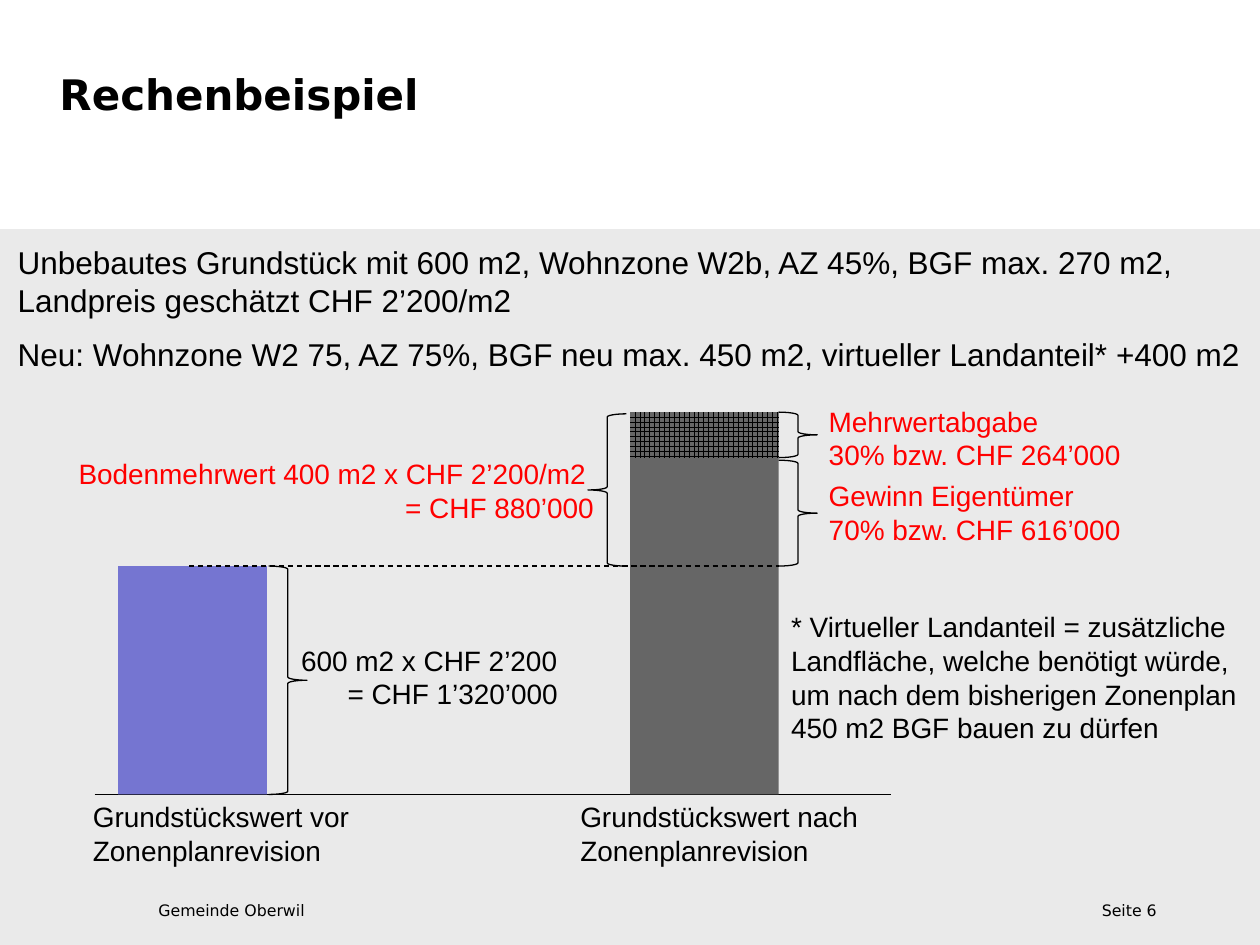
from lxml import etree
from pptx import Presentation
from pptx.dml.color import RGBColor
from pptx.enum import dml, shapes, text
from pptx.oxml.ns import qn
from pptx.util import Pt

COLORS = {"black": "000000", "red": "FF0000", "panel": "EAEAEA",
          "before": "7575D1", "after": "666666"}
COLORS = {name: RGBColor.from_string(c) for name, c in COLORS.items()}
LEFT, RIGHT = text.PP_ALIGN.LEFT, text.PP_ALIGN.RIGHT
RECT = shapes.MSO_SHAPE.RECTANGLE
LEFT_BRACE, RIGHT_BRACE = shapes.MSO_SHAPE.LEFT_BRACE, shapes.MSO_SHAPE.RIGHT_BRACE

prs = Presentation()
prs.slide_width, prs.slide_height = Pt(720), Pt(540)
s = prs.slides.add_slide(prs.slide_layouts[5])


def add_shape(kind, box, fill=None):
    """Add a filled shape without outline, or a thin outline without fill."""
    sp = s.shapes.add_shape(kind, *map(Pt, box))
    sp.shadow.inherit = False
    if fill:
        sp.fill.solid()
        sp.fill.fore_color.rgb = COLORS[fill]
        sp.line.fill.background()
    else:
        sp.fill.background()
        sp.line.color.rgb = COLORS["black"]
        sp.line.width = Pt(0.75)
    return sp


def write(sp, lines, size, color="black", font="Arial", bold=False, align=LEFT, margins=None):
    """Fill a text frame with one paragraph per line."""
    tf = sp.text_frame
    tf.vertical_anchor = text.MSO_ANCHOR.TOP
    if margins is not None:
        tf.margin_left = tf.margin_right = tf.margin_top = tf.margin_bottom = Pt(margins)
    for i, line in enumerate(lines):
        p = tf.paragraphs[0] if i == 0 else tf.add_paragraph()
        p.alignment = align
        r = p.add_run()
        r.text = line
        for name, value in {"name": font, "size": Pt(size), "bold": bold}.items():
            setattr(r.font, name, value)
        r.font.color.rgb = COLORS[color]
    return tf


# Panel, title and footer
panel = add_shape(RECT, (0, 131, 720, 409), "panel")
s.shapes._spTree.insert(2, panel._element)

title = s.shapes.title
for name, value in {"left": 34, "top": 41, "width": 477, "height": 72}.items():
    setattr(title, name, Pt(value))
tf = write(title, ["Rechenbeispiel"], 24, font="DejaVu Sans", bold=True, margins=0)
tf.auto_size = text.MSO_AUTO_SIZE.NONE
tf.paragraphs[0].line_spacing = 0.95

for box, line, align in [((90.5, 515, 425, 11), "Gemeinde Oberwil", LEFT),
                         ((588, 515, 73, 25), "Seite 6", RIGHT)]:
    sp = s.shapes.add_textbox(*map(Pt, box))
    write(sp, [line], 9, font="DejaVu Sans", align=align, margins=0).word_wrap = True

# Assumptions and footnote
sp = s.shapes.add_textbox(Pt(3), Pt(135.5), Pt(716), Pt(82))
tf = write(sp, ["Unbebautes Grundstück mit 600 m2, Wohnzone W2b, AZ 45%, BGF max. 270 m2, "
                "Landpreis geschätzt CHF 2’200/m2",
                "Neu: Wohnzone W2 75, AZ 75%, BGF neu max. 450 m2, virtueller Landanteil* +400 m2"], 18)
tf.word_wrap = True
tf.paragraphs[1].space_before = Pt(9)

sp = s.shapes.add_textbox(Pt(445), Pt(345), Pt(273.5), Pt(85))
tf = write(sp, ["* Virtueller Landanteil = zusätzliche Landfläche, welche benötigt würde,",
                "um nach dem bisherigen Zonenplan 450 m2 BGF bauen zu dürfen"], 16)
tf.word_wrap = True

# Value bars
BASE, OLD_TOP, NEW_TOP, LEVY_END = 454, 323.5, 235.5, 261.5
BEFORE_X, AFTER_X, BAR_W = 67.5, 360, 85
BEFORE_END, AFTER_END = BEFORE_X + BAR_W, AFTER_X + BAR_W
BRACE_W = 22

rules = []
for x1, x2, y in [(54, 509, BASE), (108, AFTER_END, OLD_TOP)]:
    line = s.shapes.add_connector(shapes.MSO_CONNECTOR.STRAIGHT, Pt(x1), Pt(y), Pt(x2), Pt(y))
    line.line.color.rgb = COLORS["black"]
    line.line.width = Pt(0.75)
    etree.SubElement(line._element.spPr, qn("a:effectLst"))
    rules.append(line)
baseline, old_level = rules
old_level.line.dash_style = dml.MSO_LINE.DASH

for x, top, fill in [(BEFORE_X, OLD_TOP, "before"), (AFTER_X, NEW_TOP, "after")]:
    bar = add_shape(RECT, (x, top, BAR_W, BASE - top), fill)
    old_level._element.addprevious(bar._element)

levy = add_shape(RECT, (AFTER_X, NEW_TOP, BAR_W, LEVY_END - NEW_TOP), "after")
levy.fill.patterned()
levy.fill.pattern = dml.MSO_PATTERN.LARGE_GRID
levy.fill.fore_color.rgb = COLORS["black"]
levy.fill.back_color.rgb = COLORS["after"]

# Braces
for kind, x, top, bottom in [(LEFT_BRACE, AFTER_X - BRACE_W - 2, NEW_TOP + 1, OLD_TOP),
                             (RIGHT_BRACE, AFTER_END, NEW_TOP, LEVY_END),
                             (RIGHT_BRACE, AFTER_END, LEVY_END + 1.5, OLD_TOP),
                             (RIGHT_BRACE, BEFORE_END + 1, OLD_TOP, BASE)]:
    add_shape(kind, (x, top, BRACE_W, bottom - top))

# Labels
labels = [
    (46, 453.5, 167, ["Grundstückswert vor", "Zonenplanrevision"], "black", LEFT),
    (324.5, 453.5, 176.5, ["Grundstückswert nach", "Zonenplanrevision"], "black", LEFT),
    (34, 257.5, 312.5, ["Bodenmehrwert 400 m2 x CHF 2’200/m2 ", "= CHF 880’000"], "red", RIGHT),
    (466.5, 227.5, 188, ["Mehrwertabgabe", "30% bzw. CHF 264’000"], "red", LEFT),
    (466.5, 270, 188, ["Gewinn Eigentümer", "70% bzw. CHF 616’000"], "red", LEFT),
    (165, 364, 168, ["600 m2 x CHF 2’200", "= CHF 1’320’000"], "black", LEFT),
]
for x, y, width, lines, color, align in labels:
    sp = s.shapes.add_textbox(Pt(x), Pt(y), Pt(width), Pt(46))
    tf = write(sp, lines, 16, color, align=align)
    tf.word_wrap = False
# The last label has its result line indented
tf.paragraphs[1]._p.get_or_add_pPr().set("marL", str(Pt(26.5)))

prs.save("out.pptx")
